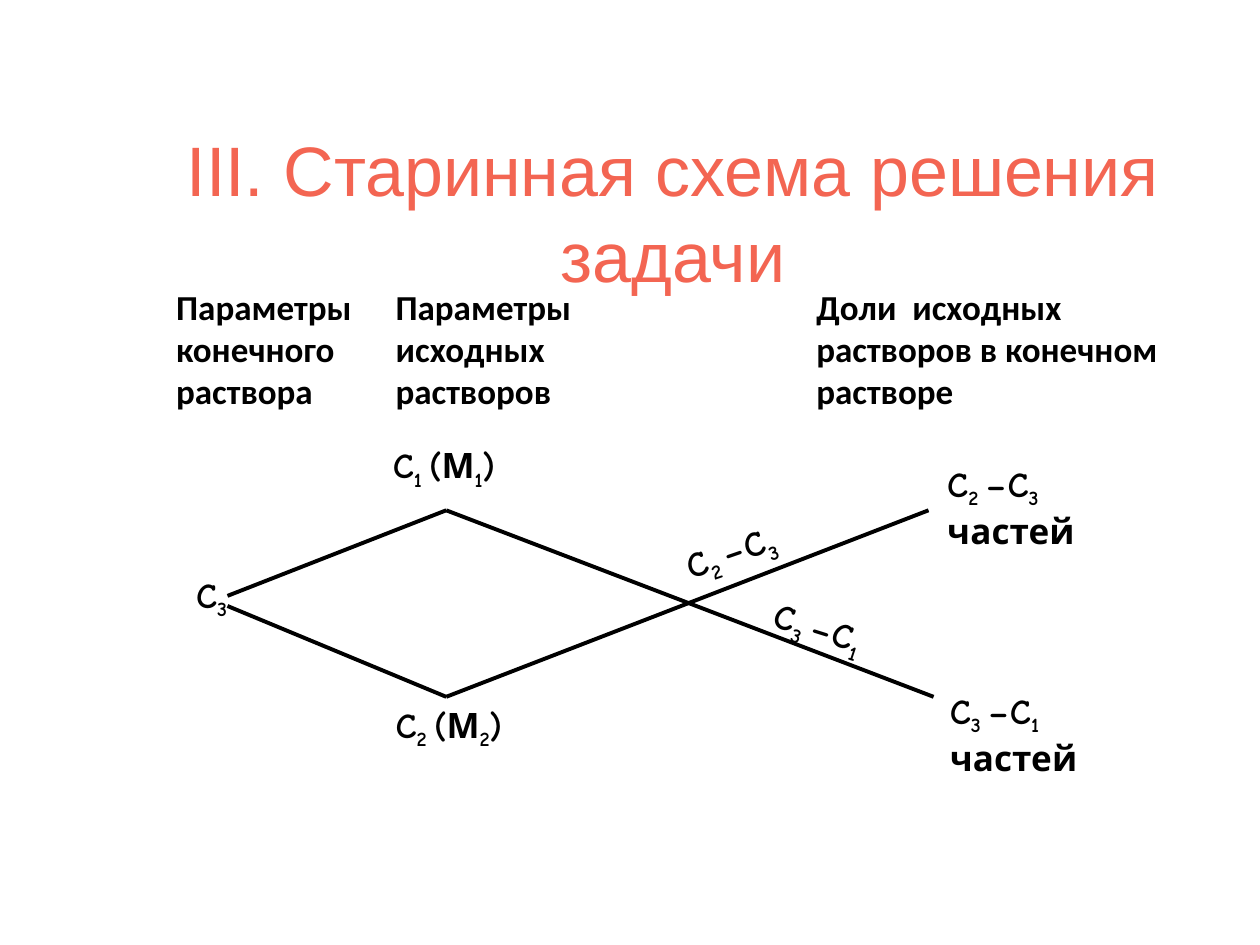
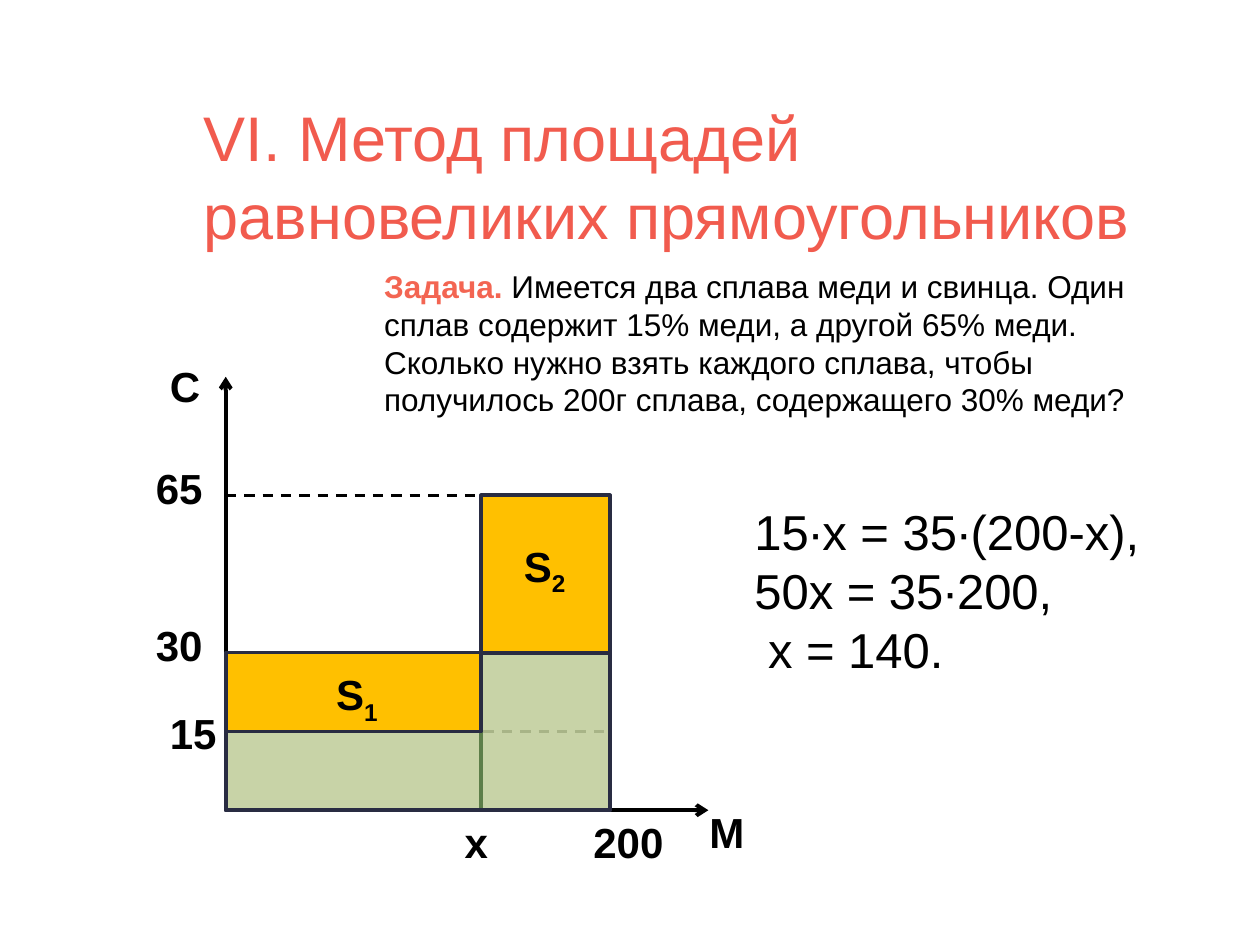
import pptx
import pptx.util
import pptx.dml.color
import pptx.enum.dml
import pptx.enum.shapes
import pptx.enum.text
import pptx.oxml.ns
import pptx.oxml.xmlchemy

Pt = pptx.util.Pt
qn = pptx.oxml.ns.qn
Align = pptx.enum.text.PP_ALIGN

BLACK, CORAL, RED = "000000", "F36552", "F15B4E"
EDGE, PINK, GREEN, GOLD = "292C42", "FFCCFF", "92D050", "FFC000"


def color(code):
    return pptx.dml.color.RGBColor.from_string(code)


def sub(parent, tag, **attrs):
    """Append an XML element."""
    node = pptx.oxml.xmlchemy.OxmlElement(tag)
    for key, value in attrs.items():
        node.set(key, value)
    parent.append(node)


def box(shapes, x, y, w, h, turn=0):
    """Add an empty wrapping text box."""
    shape = shapes.add_textbox(Pt(x), Pt(y), Pt(w), Pt(h))
    shape.rotation = turn
    frame = shape.text_frame
    frame.word_wrap = True
    frame.auto_size = pptx.enum.text.MSO_AUTO_SIZE.SHAPE_TO_FIT_TEXT
    return frame


def write(para, text, size, face="Arial", tint=BLACK, bold=False):
    """Add runs; parts between underscores become subscripts."""
    for i, part in enumerate(text.split("_")):
        if not part:
            continue
        run = para.add_run()
        run.text = part
        font = run.font
        font.size, font.name, font.bold = Pt(size), face, bold
        font.color.rgb = color(tint)
        if i % 2:
            run._r.get_or_add_rPr().set("baseline", "-25000")


def label(shapes, text, place, size, face="Arial", turn=0):
    frame = box(shapes, *place, turn)
    write(frame.paragraphs[0], text, size, face, bold=True)


def title(slide, lines, place, size, tint, align):
    frame = box(slide.shapes, *place)
    frame.auto_size = pptx.enum.text.MSO_AUTO_SIZE.NONE
    frame.margin_top = Pt(6)
    for i, text in enumerate(lines):
        para = frame.add_paragraph() if i else frame.paragraphs[0]
        para.alignment = align
        para.line_spacing = 1.03
        write(para, text, size, tint=tint)


def stroke(shapes, start, end, width=2.25, dash=False, arrow=False):
    line = shapes.add_connector(
        pptx.enum.shapes.MSO_CONNECTOR.STRAIGHT,
        *[Pt(v) for v in (*start, *end)])
    line.line.color.rgb = color(BLACK)
    line.line.width = Pt(width)
    if dash:
        line.line.dash_style = pptx.enum.dml.MSO_LINE.DASH
    props = line._element.spPr
    if arrow:
        sub(props.find(qn("a:ln")), "a:tailEnd", type="arrow")
    sub(props, "a:effectLst")


def area(shapes, x, y, w, h, tint, alpha):
    rect = shapes.add_shape(pptx.enum.shapes.MSO_SHAPE.RECTANGLE,
                            Pt(x), Pt(y), Pt(w), Pt(h))
    rect.shadow.inherit = False
    rect.fill.solid()
    rect.fill.fore_color.rgb = color(tint)
    rect.line.color.rgb = color(EDGE)
    rect.line.width = Pt(2)
    if alpha < 100:
        fill = rect._element.spPr.find(qn("a:solidFill"))
        sub(fill[0], "a:alpha", val=str(alpha * 1000))


def heads(slide, y):
    """Column headings above the scheme."""
    for text, x, w in (("Параметры конечного раствора", 93.6, 124),
                       ("Параметры исходных растворов", 219, 127.5),
                       ("Доли  исходных растворов в конечном растворе", 459.4, 219.6)):
        label(slide.shapes, text, (x, y, w, 80), 20, "Calibri")


def cross(slide, x, y):
    """Crossing lines with concentration labels."""
    shapes = slide.shapes.add_group_shape().shapes
    top, low, mid = y + 41.6, y + 148.2, x + 150
    stroke(shapes, (x + 25, y + 90.5), (mid, top))
    stroke(shapes, (x + 25, y + 96.3), (mid, low))
    stroke(shapes, (mid, low), (x + 425.6, top))
    stroke(shapes, (mid, top), (x + 428.5, low))
    for text, dx, dy, w, h, turn in (
            ("C_3_", 0, 74, 41, 31, 0),
            ("C_1 _(М_1_)", 112.4, 0, 82, 31, 0),
            ("C_2 _(М_2_)", 114, 148.2, 88.6, 31, 0),
            ("C_2 _–C_3_", 278.8, 48, 75, 31, 341),
            ("C_3 _–C_1_", 330, 94.2, 75.6, 31, 17.4),
            ("C_2 _–C_3 _частей", 429.2, 10.6, 133.2, 55.4, 0),
            ("C_3 _–C_1 _частей", 430.7, 140.2, 126.7, 55.4, 0)):
        label(shapes, text, (x + dx, y + dy, w, h), 20, "Comic Neue", turn)


def graph(slide, x, y):
    """Equal-area graph; x, y is the origin of its axes."""
    shapes = slide.shapes
    part, full = 146, 219.6             # masses x and 200
    weak, mix, rich = 45, 90, 180       # shares 15, 30 and 65

    # Axes
    stroke(shapes, (x, y), (x, y - 247.7), arrow=True)
    stroke(shapes, (x, y), (x + 275.8, y), arrow=True)

    # Guides
    for rise in (rich, mix, weak):
        stroke(shapes, (x, y - rise), (x + full, y - rise), 1.5, True)
    for run in (full, part):
        stroke(shapes, (x + run, y - rich), (x + run, y), 1.5, True)

    # Areas: left, width, top, height, fill, opacity
    for dx, w, rise, h, tint, alpha in (
            (0, part, weak, weak, PINK, 75),
            (part, full - part, rich, rich, PINK, 75),
            (0, full, mix, mix, GREEN, 50),
            (0, part, mix, mix - weak, GOLD, 100),
            (part, full - part, rich, rich - mix, GOLD, 100)):
        area(shapes, x + dx, y - rise, w, h, tint, alpha)

    # Labels
    for text, dx, dy, w in (
            ("С", -39, -260.7, 39.6), ("65", -47, -202.4, 46.8),
            ("30", -47, -112.4, 46.8), ("15", -39, -62, 45.4),
            ("х", 129.5, 0, 50.4), ("200", 203, 0, 56.2),
            ("М", 269.2, -5.8, 39.6),
            ("S_1_", 56, -84.3, 39.6), ("S_2_", 163.3, -157.7, 39.6)):
        label(shapes, text, (x + dx, y + dy, w, 36), 24)


def task(slide, x, y, w, h):
    """Wording of the problem."""
    para = box(slide.shapes, x, y, w, h).paragraphs[0]
    write(para, "Задача. ", 18, tint=CORAL, bold=True)
    write(para, "Имеется два сплава меди и свинца. Один сплав содержит "
                "15% меди, а другой 65% меди. Сколько нужно взять каждого "
                "сплава, чтобы получилось 200г сплава, содержащего 30% меди?", 18)


def solve(slide, x, y, w, h):
    """Steps of the solution."""
    frame = box(slide.shapes, x, y, w, h)
    steps = (("15∙х = 35∙(200-х),", 7.8), ("50х = 35∙200,", 7.8),
             ("х = 140.", 15.6))
    for i, (text, inset) in enumerate(steps):
        para = frame.add_paragraph() if i else frame.paragraphs[0]
        para._p.get_or_add_pPr().set("marL", str(int(Pt(inset))))
        write(para, text, 28)


def main():
    deck = pptx.Presentation()
    deck.slide_width, deck.slide_height = Pt(720), Pt(540)
    blank = deck.slide_layouts[6]

    # Old scheme
    slide = deck.slides.add_slide(blank)
    title(slide, ["III. Старинная схема решения задачи"],
          (90.7, 64.8, 587.5, 78.5), 40, CORAL, Align.CENTER)
    heads(slide, 159.8)
    cross(slide, 105, 250)

    # Equal areas
    slide = deck.slides.add_slide(blank)
    title(slide, ["VI. Метод площадей", "равновеликих прямоугольников"],
          (109.4, 49, 641.5, 90), 36, RED, Align.LEFT)
    graph(slide, 129, 463)
    task(slide, 212.4, 149, 447, 94.3)
    solve(slide, 416.2, 283, 244, 108.7)

    deck.save("out.pptx")


if __name__ == "__main__":
    main()
